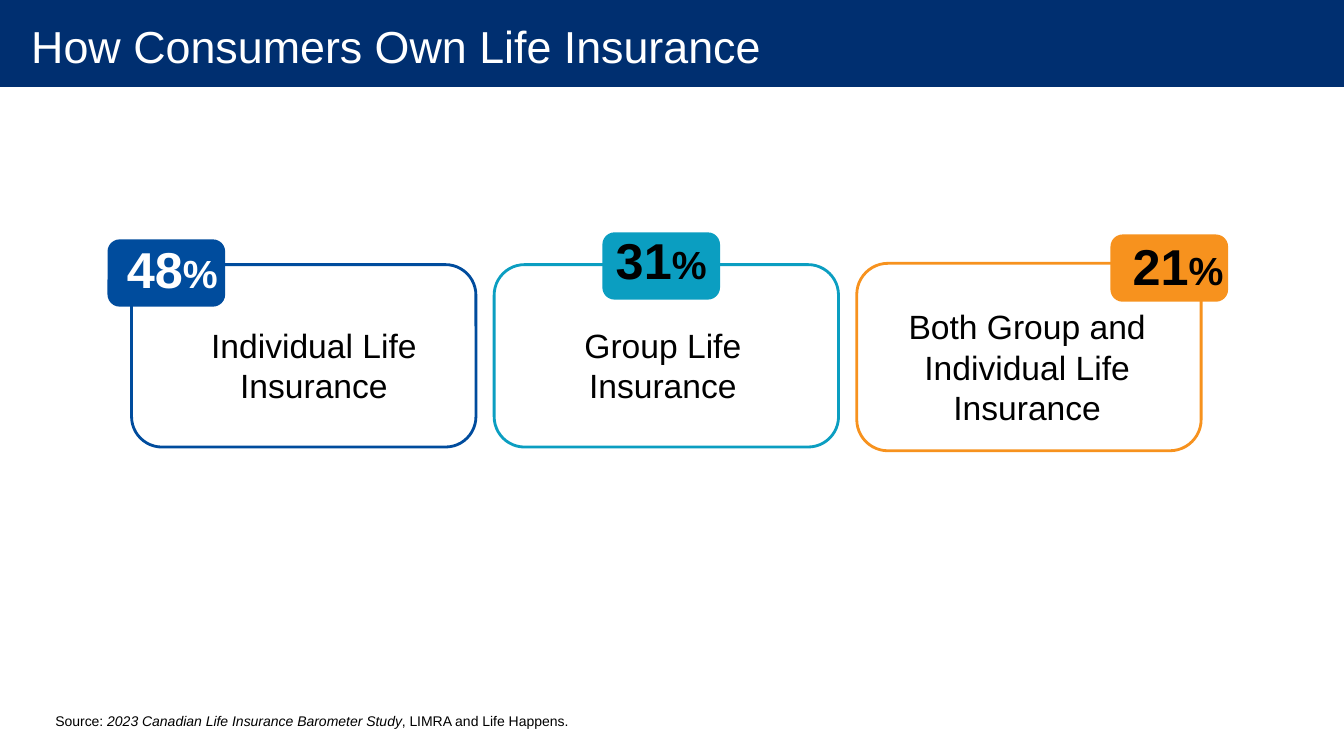
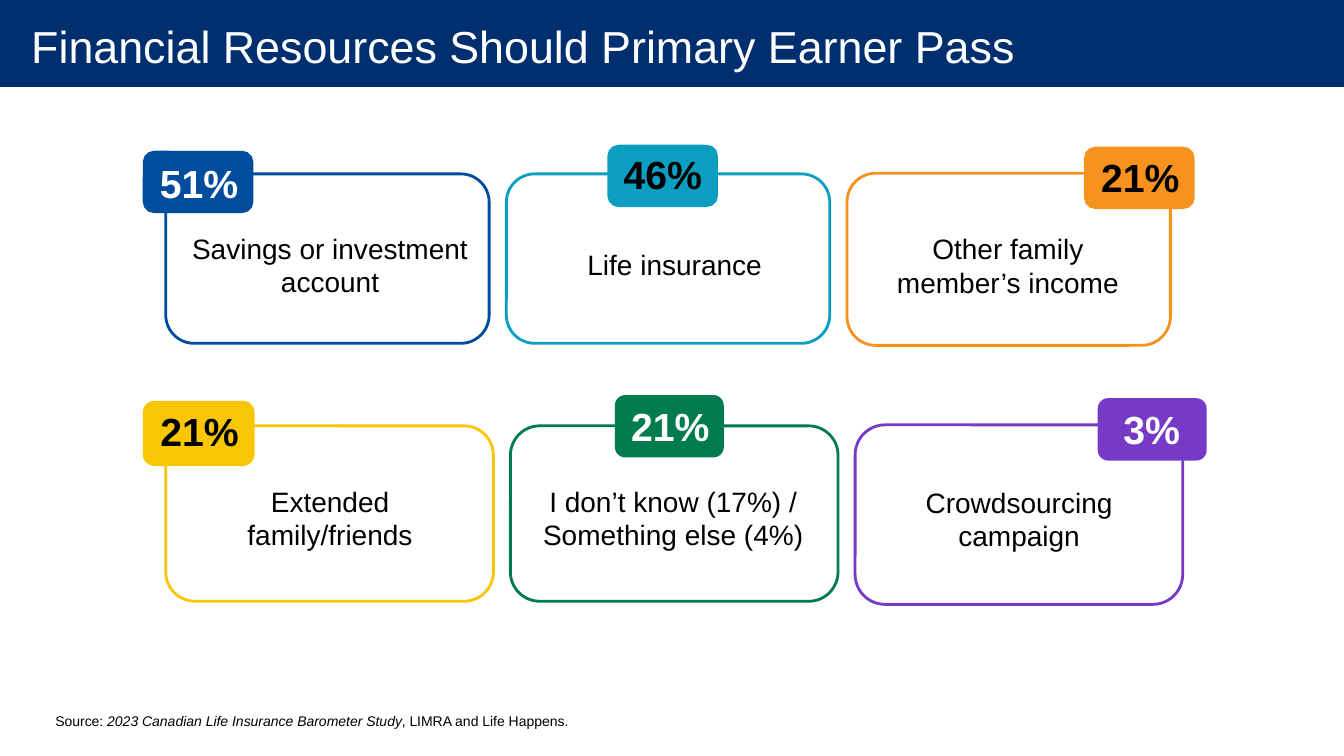
"""Build two slides of percentage cards on life insurance ownership and resources."""
from dataclasses import dataclass
from typing import Any

from pptx import Presentation
from pptx import util as u
from pptx.dml import color
from pptx.enum import shapes, text

COLORS = {
    "navy": "002F70", "blue": "004C9D", "teal": "0B9EC1", "orange": "F7921E",
    "yellow": "F9C606", "green": "007B4E", "purple": "763AC7",
    "white": "FFFFFF", "black": "000000",
}
FONT = "Arial"
SLIDE_WIDTH, SLIDE_HEIGHT = 960, 540
BAND_HEIGHT = 62
LINE_WIDTH = 2
TITLE_BOX = (0.7, -2.2, SLIDE_WIDTH, 70)
SOURCE_BOX = (32.4, 505.4, 536, 19.4)
TITLE_FRAME = {
    "margin_left": u.Pt(21.6), "margin_right": u.Pt(14.4), "margin_top": 0, "margin_bottom": 0,
    "vertical_anchor": text.MSO_ANCHOR.MIDDLE, "word_wrap": True,
    "auto_size": text.MSO_AUTO_SIZE.NONE,
}
SOURCE_RUNS = (
    ("Source: ", False),
    ("2023 Canadian Life Insurance Barometer Study", True),
    (", LIMRA and Life Happens.", False),
)


@dataclass(frozen=True)
class Card:
    label: str
    number: str
    fill: str
    badge_ink: str
    side_insets: tuple[float, float]
    badge_at: tuple[float, float]
    badge_shift: tuple[float, float] = (0, 0)
    badge_line: float = LINE_WIDTH
    extra_height: float = 0


@dataclass(frozen=True)
class CardRow:
    left: float
    top: float
    pitch: float
    card_size: tuple[float, float]
    badge_size: tuple[float, float]
    top_inset: float
    label_size: float
    number_size: float
    cards: tuple[Card, ...]


@dataclass(frozen=True)
class CardSlide:
    title: str
    rows: tuple[CardRow, ...]


CARD_SLIDES = (
    CardSlide("How Consumers Own Life Insurance", (
        CardRow(94, 189, 259, (246, 130.3), (82, 46), 13.6, 24, 36, (
            Card("Individual Life Insurance", "48", "blue", "white",
                 (41.5, 27), (77.8, 172), (4.3, -3.5)),
            Card("Group Life Insurance", "31", "teal", "black",
                 (49.7, 54.7), (431.3, 167), (0, -5)),
            Card("Both Group and Individual Life Insurance", "21", "orange", "black",
                 (15.3, 17.9), (794.2, 168.5), (6.2, -2), extra_height=3.6),
        )),
    )),
    CardSlide("Financial Resources Should Primary Earner Pass", (
        CardRow(118.4, 124.2, 243.3, (231, 121), (77, 42.5), 8.6, 20, 28, (
            Card("Savings or investment account", "51", "blue", "white",
                 (9.6, 5.9), (103, 108.7), (0.7, 0.7)),
            Card("Life insurance", "46", "teal", "black",
                 (36.3, 26.8), (434.9, 104.4), (0, -1.4)),
            Card("Other family member’s income", "21", "orange", "black",
                 (15.5, 16.6), (775.4, 105.8), (0.7, -0.8), extra_height=2),
        )),
        CardRow(118.4, 304.2, 246.2, (234, 125.3), (77.8, 44.6), 6, 20, 28, (
            Card("Extended family/friends", "21", "yellow", "black",
                 (33.2, 32.4), (103, 287.3), (0.6, -1.8)),
            Card("I don’t know (17%) / Something else (4%)", "21", "green", "white",
                 (5.1, 6.5), (439.2, 282.2), (0.7, -0.3), badge_line=0),
            Card("Crowdsourcing campaign", "3", "purple", "white",
                 (16, 15.7), (784.1, 284.4), (-0.4, -0.4), badge_line=0, extra_height=2.9),
        )),
    )),
)


def rgb(name: str) -> color.RGBColor:
    return color.RGBColor.from_string(COLORS[name])


def apply(target: Any, values: dict[str, Any]) -> None:
    for name, value in values.items():
        setattr(target, name, value)


def add_run(paragraph: Any, words: str, size: float, ink: str, **extra: bool) -> None:
    run = paragraph.add_run()
    run.text = words
    apply(run.font, {"name": FONT, "size": u.Pt(size), **extra})
    run.font.color.rgb = rgb(ink)


def add_block(slide: Any, kind: Any, box: tuple[float, ...], fill: str,
              line: str, line_width: float) -> Any:
    shape = slide.shapes.add_shape(kind, *(u.Pt(value) for value in box))
    shape.shadow.inherit = False
    shape.fill.solid()
    shape.fill.fore_color.rgb = rgb(fill)
    if line_width:
        shape.line.color.rgb = rgb(line)
        shape.line.width = u.Pt(line_width)
    else:
        shape.line.fill.background()
    return shape


def centered_paragraph(shape: Any, margins: tuple[float, ...], wrap: bool) -> Any:
    names = ("margin_left", "margin_top", "margin_right", "margin_bottom")
    apply(shape.text_frame, {
        **{name: u.Pt(value) for name, value in zip(names, margins)},
        "word_wrap": wrap, "vertical_anchor": text.MSO_ANCHOR.MIDDLE,
    })
    paragraph = shape.text_frame.paragraphs[0]
    paragraph.alignment = text.PP_ALIGN.CENTER
    return paragraph


def add_card(slide: Any, row: CardRow, card: Card, index: int) -> None:
    rounded = shapes.MSO_SHAPE.ROUNDED_RECTANGLE
    width, height = row.card_size
    box = (row.left + index * row.pitch, row.top - card.extra_height / 4,
           width, height + card.extra_height)
    outline = add_block(slide, rounded, box, "white", card.fill, LINE_WIDTH)
    left, right = card.side_insets
    paragraph = centered_paragraph(outline, (left, row.top_inset, right, 0), True)
    add_run(paragraph, card.label, row.label_size, "black")

    badge = add_block(slide, rounded, (*card.badge_at, *row.badge_size),
                      card.fill, card.fill, card.badge_line)
    across, down = (2 * shift for shift in card.badge_shift)
    margins = (max(across, 0), max(down, 0), max(-across, 0), max(-down, 0))
    paragraph = centered_paragraph(badge, margins, False)
    add_run(paragraph, card.number, row.number_size, card.badge_ink, bold=True)
    add_run(paragraph, "%", 28, card.badge_ink, bold=True)


def place(shape: Any, box: tuple[float, ...]) -> None:
    apply(shape, dict(zip(("left", "top", "width", "height"), map(u.Pt, box))))


def add_title(slide: Any, words: str) -> None:
    title = slide.shapes.title
    place(title, TITLE_BOX)
    apply(title.text_frame, TITLE_FRAME)
    paragraph = title.text_frame.paragraphs[0]
    paragraph.alignment = text.PP_ALIGN.LEFT
    add_run(paragraph, words, 32, "white")


def add_source(slide: Any) -> None:
    shape = slide.shapes.add_textbox(*map(u.Pt, SOURCE_BOX))
    shape.text_frame.word_wrap = True
    for words, italic in SOURCE_RUNS:
        add_run(shape.text_frame.paragraphs[0], words, 10, "black", italic=italic)


def add_layout_band(slide: Any) -> None:
    band = add_block(slide, shapes.MSO_SHAPE.RECTANGLE,
                     (0, 0, SLIDE_WIDTH, BAND_HEIGHT), "navy", "navy", 0)
    slide.slide_layout.shapes.element.insert(2, band.element)


def main() -> None:
    presentation = Presentation()
    apply(presentation, {"slide_width": u.Pt(SLIDE_WIDTH), "slide_height": u.Pt(SLIDE_HEIGHT)})
    layout = presentation.slide_layouts.get_by_name("Title Only")
    for number, content in enumerate(CARD_SLIDES):
        slide = presentation.slides.add_slide(layout)
        if number == 0:
            add_layout_band(slide)
        add_title(slide, content.title)
        add_source(slide)
        for row in content.rows:
            for index, card in enumerate(row.cards):
                add_card(slide, row, card, index)
    presentation.save("out.pptx")


if __name__ == "__main__":
    main()
